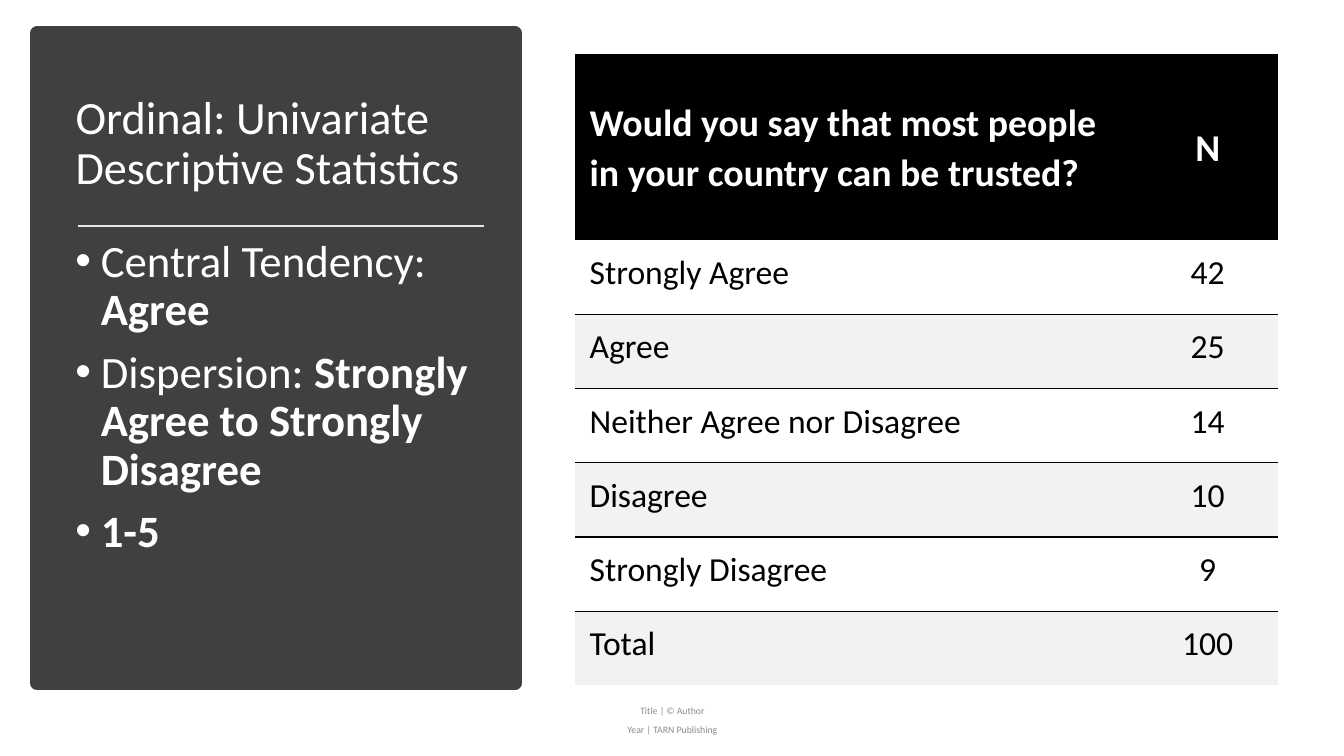
"""Build the slide on univariate descriptive statistics for an ordinal variable."""
from dataclasses import dataclass

from lxml.etree import SubElement
from pptx import Presentation
from pptx.dml.color import RGBColor
from pptx.enum.shapes import MSO_CONNECTOR, MSO_SHAPE
from pptx.enum.text import MSO_ANCHOR as Anchor, MSO_AUTO_SIZE as AutoSize, PP_ALIGN as Align
from pptx.oxml.ns import qn
from pptx.util import Cm, Pt

FONT = "Calibri"
WHITE = RGBColor(0xFF, 0xFF, 0xFF)
BLACK = RGBColor(0, 0, 0)
CHARCOAL = RGBColor(0x40, 0x40, 0x40)
RULE_GREY = RGBColor(0xE7, 0xE6, 0xE6)
BAND_GREY = RGBColor(0xF2, 0xF2, 0xF2)
FOOTER_GREY = RGBColor(0x8C, 0x8C, 0x8C)
PLAIN_TABLE_STYLE = "{2D5ABB26-0587-4C30-8999-92F81FD0307C}"
INDENT = Cm(0.64)


@dataclass(frozen=True)
class Bullet:
    label: str
    finding: str


@dataclass(frozen=True)
class CellStyle:
    size: int
    color: RGBColor
    fill: RGBColor
    bold: bool = False
    anchor: Anchor = Anchor.TOP
    top: float = 0.25
    border: str = ""


BULLETS = (
    Bullet("Central Tendency: ", "Agree"),
    Bullet("Dispersion: ", "Strongly Agree to Strongly Disagree"),
    Bullet("", "1-5"),
)
FOOTER_LINES = ("Title | © Author", "Year | TARN Publishing")
HEADER = ("Would you say that most people in your country can be trusted?", "N")
ANSWERS = (
    ("Strongly Agree", 42),
    ("Agree", 25),
    ("Neither Agree nor Disagree", 14),
    ("Disagree", 10),
    ("Strongly Disagree", 9),
    ("Total", 100),
)
HEADER_STYLE = CellStyle(27, WHITE, BLACK, bold=True, anchor=Anchor.MIDDLE, top=0.48)
ANSWER_STYLES = (
    CellStyle(24, BLACK, WHITE, border="a:lnB"),
    CellStyle(24, BLACK, BAND_GREY, border="a:lnT"),
)


def format_paragraph(para, size: float, color: RGBColor, spacing: float = 0.9) -> None:
    para.line_spacing = spacing
    para.font.name = FONT
    para.font.size = Pt(size)
    para.font.color.rgb = color


def add_panel(page) -> None:
    panel = page.shapes.add_shape(MSO_SHAPE.RECTANGLE, Cm(0.94), Cm(0.84), Cm(12.04), Cm(16.38))
    panel.shadow.inherit = False
    panel.fill.solid()
    panel.fill.fore_color.rgb = CHARCOAL
    panel.line.color.rgb = CHARCOAL
    panel.line.width = Pt(10)
    page.shapes.title.element.addprevious(panel.element)


def format_title(title) -> None:
    title.left, title.top, title.width, title.height = Cm(1.65), Cm(1.78), Cm(10.62), Cm(3.73)
    frame = title.text_frame
    frame.text = "Ordinal: Univariate Descriptive Statistics"
    frame.word_wrap = True
    frame.auto_size = AutoSize.NONE
    frame.vertical_anchor = Anchor.MIDDLE
    frame.paragraphs[0].alignment = Align.LEFT
    format_paragraph(frame.paragraphs[0], 33, WHITE)


def add_rule(page) -> None:
    rule = page.shapes.add_connector(MSO_CONNECTOR.STRAIGHT, Cm(1.96), Cm(5.69), Cm(12.19), Cm(5.69))
    rule.line.color.rgb = RULE_GREY
    rule.line.width = Pt(1.75)
    SubElement(rule.element.spPr, qn("a:effectLst"))


def add_bullets(page) -> None:
    frame = page.shapes.add_textbox(Cm(1.65), Cm(5.89), Cm(10.62), Cm(10.49)).text_frame
    frame.word_wrap = True
    for index, bullet in enumerate(BULLETS):
        para = frame.add_paragraph() if index else frame.paragraphs[0]
        format_paragraph(para, 32, WHITE)
        para.space_before = Pt(10)
        properties = para._p.get_or_add_pPr()
        properties.set("marL", str(INDENT))
        properties.set("indent", str(-INDENT))
        mark_font = properties.makeelement(qn("a:buFont"), {"typeface": "Arial"})
        mark = properties.makeelement(qn("a:buChar"), {"char": "•"})
        properties.find(qn("a:defRPr")).addprevious(mark_font)
        mark_font.addnext(mark)
        for text, bold in ((bullet.label, False), (bullet.finding, True)):
            if text:
                span = para.add_run()
                span.text = text
                span.font.bold = bold


def add_footer(page) -> None:
    frame = page.shapes.add_textbox(Cm(11.23), Cm(17.65), Cm(11.43), Cm(1.02)).text_frame
    frame.word_wrap = True
    frame.vertical_anchor = Anchor.MIDDLE
    for index, line in enumerate(FOOTER_LINES):
        para = frame.add_paragraph() if index else frame.paragraphs[0]
        para.text = line
        para.alignment = Align.CENTER
        para.space_after = Pt(6)
        format_paragraph(para, 7, FOOTER_GREY)


def fill_cell(cell, text: str, align: Align, style: CellStyle) -> None:
    cell.text = text
    cell.vertical_anchor = style.anchor
    cell.margin_left, cell.margin_right = Cm(0.36), Cm(0.25)
    cell.margin_top, cell.margin_bottom = Cm(style.top), Cm(0.48)
    if style.border:
        border = SubElement(cell._tc.get_or_add_tcPr(), qn(style.border), w=str(Pt(1)))
        color = SubElement(SubElement(border, qn("a:solidFill")), qn("a:srgbClr"))
        color.set("val", str(BLACK))
    cell.fill.solid()
    cell.fill.fore_color.rgb = style.fill
    para = cell.text_frame.paragraphs[0]
    para.alignment = align
    format_paragraph(para, style.size, style.color, 1.07)
    para.font.bold = style.bold


def add_answer_table(page) -> None:
    rows = (HEADER, *ANSWERS)
    frame = page.shapes.add_table(len(rows), 2, Cm(14.5), Cm(1.35), Cm(17.71), Cm(15.92))
    table = frame.table
    table.first_row = table.horz_banding = False
    table._tbl.tblPr.find(qn("a:tableStyleId")).text = PLAIN_TABLE_STYLE
    table.columns[0].width, table.columns[1].width = Cm(14.05), Cm(3.66)
    for index, (answer, count) in enumerate(rows):
        table.rows[index].height = Cm(1.87 if index else 4.7)
        style = ANSWER_STYLES[(index - 1) % 2] if index else HEADER_STYLE
        fill_cell(table.cell(index, 0), answer, Align.LEFT, style)
        fill_cell(table.cell(index, 1), str(count), Align.CENTER, style)


def main() -> None:
    deck = Presentation()
    deck.slide_width, deck.slide_height = Cm(33.87), Cm(19.05)
    page = deck.slides.add_slide(deck.slide_layouts[5])
    add_panel(page)
    format_title(page.shapes.title)
    add_rule(page)
    add_bullets(page)
    add_footer(page)
    add_answer_table(page)
    deck.save("out.pptx")


if __name__ == "__main__":
    main()
